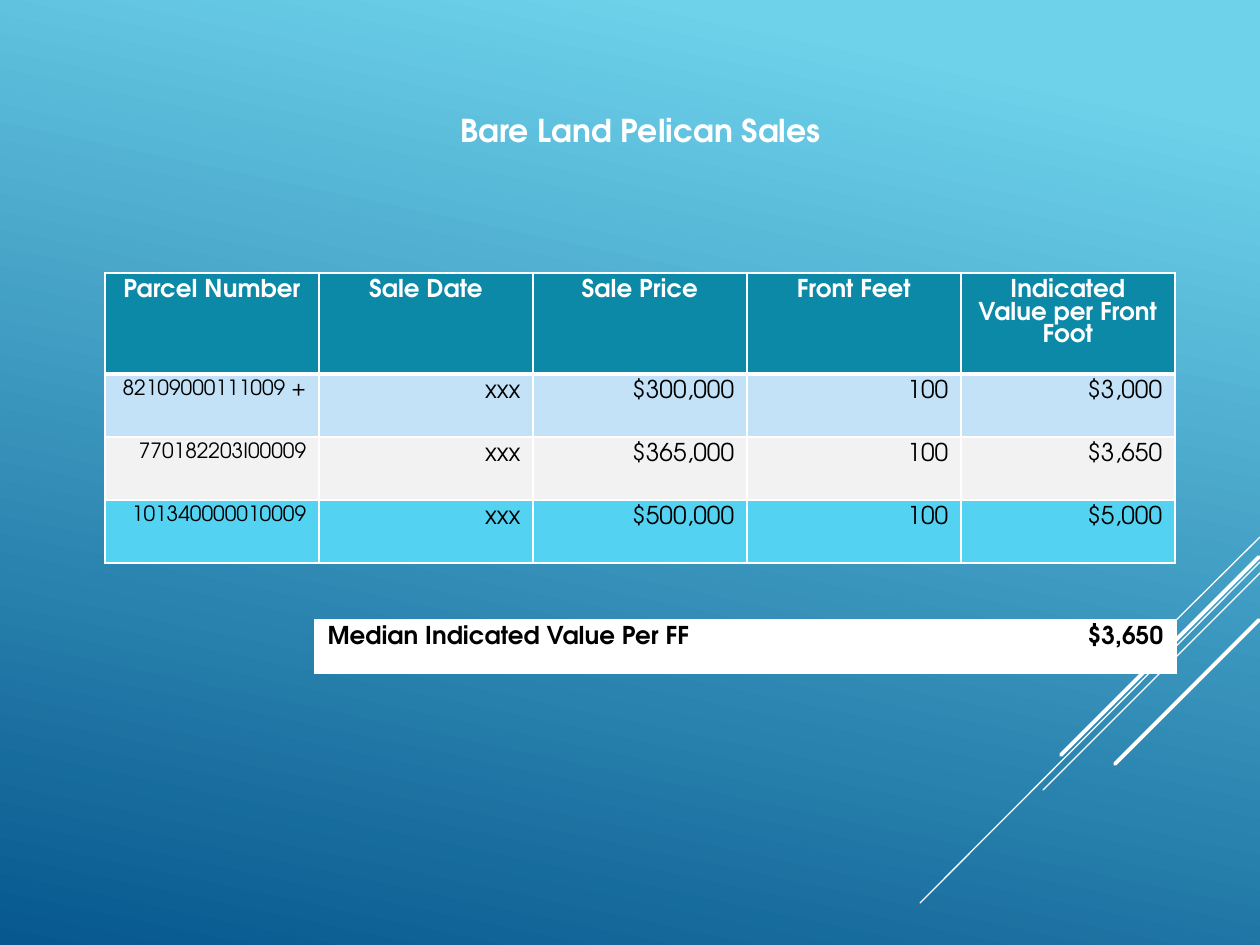
from lxml import etree
from pptx import Presentation
from pptx.dml.color import RGBColor
from pptx.enum.shapes import MSO_CONNECTOR
from pptx.enum.text import PP_ALIGN
from pptx.oxml.ns import qn
from pptx.util import Pt

LEFT, CENTER, RIGHT = PP_ALIGN.LEFT, PP_ALIGN.CENTER, PP_ALIGN.RIGHT
STRAIGHT = MSO_CONNECTOR.STRAIGHT
FONT = "TeX Gyre Adventor"
WHITE, BLACK, TEAL = "FFFFFF", "000000", "0D89A8"
SCALE = 914400 / 126

TITLE = "Bare Land Pelican Sales"
HEADS = ["Parcel Number", "Sale Date", "Sale Price", "Front Feet",
         "Indicated Value per Front Foot"]
SALES = [
    ("C3E2F7", ["82109000111009 +", "xxx", "$300,000", "100", "$3,000"]),
    ("F2F2F2", ["770182203I00009", "xxx", "$365,000", "100", "$3,650"]),
    ("54D2F1", ["101340000010009", "xxx", "$500,000", "100", "$5,000"]),
]
MEDIAN = [("Median Indicated Value Per FF", LEFT), ("$3,650", RIGHT)]
# Stripes: right end x, y; left end x, y; width in points
STRIPES = [
    (1260, 537, 1155, 641, 0.75),
    (1260, 562, 920, 903, 0.75),
    (1260, 573, 1043, 790, 0.75),
    (1259, 557, 1061, 755, 2.25),
    (1259, 620, 1115, 764, 2.25),
]


def px(n):
    return round(n * SCALE)


def rgb(code):
    return RGBColor.from_string(code)


def write(frame, text, size, color, bold, align):
    frame.text = text
    para = frame.paragraphs[0]
    para.alignment = align
    font = para.runs[0].font
    font.name, font.size, font.bold = FONT, Pt(size), bold
    font.color.rgb = rgb(color)


def edge(cell, base):
    """Draw white borders, the bottom one `base` points wide."""
    props = cell._tc.get_or_add_tcPr()
    for spot, (tag, wide) in enumerate(
            [("lnL", 1), ("lnR", 1), ("lnT", 1), ("lnB", base)]):
        line = etree.Element(qn("a:" + tag), w=str(Pt(wide)))
        fill = etree.SubElement(line, qn("a:solidFill"))
        etree.SubElement(fill, qn("a:srgbClr"), val=WHITE)
        props.insert(spot, line)


def paint(cell, fill, base, *words):
    cell.fill.solid()
    cell.fill.fore_color.rgb = rgb(fill)
    edge(cell, base)
    write(cell.text_frame, *words)


def add_grid(slide, left, top, cols, rows):
    table = slide.shapes.add_table(len(rows), len(cols), px(left), px(top),
                                   px(sum(cols)), px(sum(rows))).table
    table.first_row = table.horz_banding = False
    for col, wide in zip(table.columns, cols):
        col.width = px(wide)
    for row, high in zip(table.rows, rows):
        row.height = px(high)
    return table


def add_stripe(slide, x1, y1, x2, y2, wide):
    line = slide.shapes.add_connector(STRAIGHT, px(x1), px(y1), px(x2), px(y2))
    line.line.color.rgb = rgb(WHITE)
    line.line.width = Pt(wide)
    line.line._get_or_add_ln().set("cap", "rnd")
    etree.SubElement(line._element.spPr, qn("a:effectLst"))


def main():
    deck = Presentation()
    deck.slide_width, deck.slide_height = px(1260), px(945)
    slide = deck.slides.add_slide(deck.slide_layouts[6])

    back = slide.background.fill
    back.gradient()
    back.gradient_angle = 258
    for stop, (spot, code) in zip(back.gradient_stops,
                                  [(0.1, "6ED2EB"), (1, "06588E")]):
        stop.position = spot
        stop.color.rgb = rgb(code)

    for stripe in STRIPES:
        add_stripe(slide, *stripe)

    title = slide.shapes.add_textbox(px(431), px(105), px(419), px(51))
    title.text_frame.word_wrap = True
    write(title.text_frame, TITLE, 18, WHITE, True, CENTER)

    sales = add_grid(slide, 105, 273, [214] * 5, [101] + [63] * 3)
    for col, head in enumerate(HEADS):
        paint(sales.cell(0, col), TEAL, 3, head, 14, WHITE, True, CENTER)
    for row, (fill, items) in enumerate(SALES, 1):
        for col, item in enumerate(items):
            size = 14 if col else 12
            paint(sales.cell(row, col), fill, 1, item, size, BLACK, False, RIGHT)

    median = add_grid(slide, 315, 620, [473, 388], [52])
    for col, (text, align) in enumerate(MEDIAN):
        paint(median.cell(0, col), WHITE, 3, text, 14, BLACK, True, align)

    deck.save("out.pptx")


if __name__ == "__main__":
    main()
